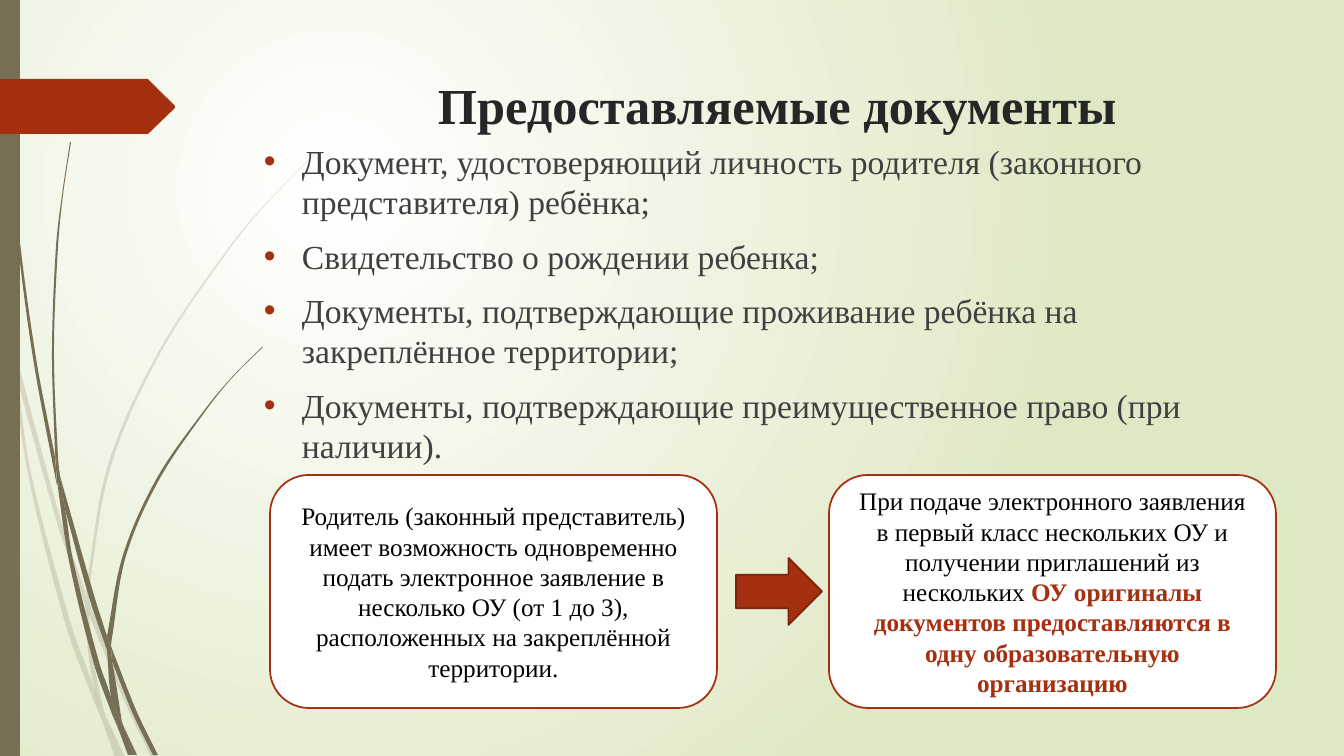
from math import dist

from lxml import etree
from pptx import Presentation
from pptx.dml.color import RGBColor
from pptx.enum.shapes import MSO_SHAPE
from pptx.enum.text import MSO_ANCHOR, MSO_AUTO_SIZE, PP_ALIGN
from pptx.oxml.ns import qn
from pptx.util import Emu, Pt

SCALE = 914400 / 100.8
FONT = "Times New Roman"
COLORS = {
    "white": "FFFFFF", "lime": "DFE8C4", "olive": "766F54", "red": "A53010",
    "dark_red": "7A240C", "title": "262626", "body": "404040", "black": "000000",
}

# Each piece of grass: one smooth edge downwards, then one upwards
PALE_GRASS = [
    ([(0, 284), (9, 325), (11, 353)], [(10, 347), (0, 301)]),
    ([(14, 348), (62, 524), (85, 591)], [(85, 604), (58, 526), (17, 379)]),
    ([(89, 601), (93, 612), (128, 698), (156, 757)],
     [(151, 757), (124, 700), (89, 615)]),
    ([(106, 717), (125, 757)], [(120, 757)]),
    ([(11, 353), (17, 379), (31, 473), (71, 624), (94, 688), (100, 713), (102, 720)],
     [(93, 699), (66, 626), (28, 474), (11, 353)]),
    ([(85, 604), (89, 615), (92, 651), (104, 712), (106, 717)],
     [(97, 698), (94, 688), (88, 651), (85, 604)]),
    ([(314, 154), (270, 199), (230, 246), (159, 351), (108, 465), (86, 589), (86, 591)],
     [(89, 601), (89, 589), (111, 466), (161, 352), (231, 247), (270, 200), (314, 155)]),
    ([(102, 720), (115, 757)], [(120, 757)]),
    ([(86, 591), (89, 601)], [(89, 615), (85, 604)]),
    ([(94, 688), (97, 698), (106, 717), (120, 757)], [(102, 720), (100, 713)]),
]
DARK_GRASS = [
    ([(4, 0), (5, 48), (8, 110), (19, 234), (36, 358), (55, 457)],
     [(57, 485), (56, 481), (33, 358), (17, 235), (7, 111), (4, 48), (3, 0)]),
    ([(60, 476), (94, 595), (107, 636)], [(107, 650), (89, 597), (65, 509)]),
    ([(111, 646), (114, 654), (137, 712), (158, 755)],
     [(153, 755), (133, 714), (112, 661)]),
    ([(57, 481), (65, 509), (73, 560), (99, 662), (111, 697), (118, 728)],
     [(112, 714), (94, 664), (69, 561), (57, 481)]),
    ([(71, 142), (63, 195), (58, 247), (54, 352), (58, 457), (60, 476)],
     [(55, 453), (52, 352), (56, 247), (62, 195), (70, 142)]),
    ([(123, 725), (137, 755)], [(134, 755)]),
    ([(55, 453), (60, 476), (65, 509)], [(57, 481)]),
    ([(262, 347), (233, 376), (206, 408), (157, 478), (123, 555), (107, 636)],
     [(111, 646), (112, 638), (126, 556), (159, 480), (207, 409), (233, 377), (263, 347)]),
    ([(118, 728), (132, 755)], [(128, 755)]),
    ([(107, 650), (112, 661), (122, 722), (123, 725)],
     [(117, 712), (111, 697), (107, 650)]),
    ([(107, 636), (111, 646)], [(112, 661), (107, 650)]),
    ([(111, 697), (117, 712), (123, 725), (134, 755)], [(131, 755), (118, 728)]),
]
TAG = [(0, 79), (148, 79), (175, 106), (175, 108), (148, 134), (0, 134)]

DOCUMENTS = [
    "Документ, удостоверяющий личность родителя (законного представителя) ребёнка;",
    "Свидетельство о рождении ребенка;",
    "Документы, подтверждающие проживание ребёнка на закреплённое территории;",
    "Документы, подтверждающие преимущественное право (при наличии).",
]
CHOICE = [("Родитель (законный представитель) имеет возможность одновременно подать "
           "электронное заявление в несколько ОУ (от 1 до 3), расположенных на "
           "закреплённой территории.", "black", False)]
ORIGINALS = [
    ("При подаче электронного заявления в первый класс нескольких ОУ и получении "
     "приглашений из нескольких ", "black", False),
    ("ОУ оригиналы документов предоставляются в одну образовательную организацию",
     "red", True),
]


def px(n):
    return Emu(round(n * SCALE))


def rgb(name):
    return RGBColor.from_string(COLORS[name])


def paint(sp, fill, line=None, alpha=None):
    sp.shadow.inherit = False
    sp.fill.solid()
    sp.fill.fore_color.rgb = rgb(fill)
    if alpha:
        color = sp.fill._xPr.find(".//" + qn("a:srgbClr"))
        etree.SubElement(color, qn("a:alpha"), val=str(alpha * 1000))
    if line:
        sp.line.color.rgb = rgb(line)
        sp.line.width = Pt(1.25)
    else:
        sp.line.fill.background()


def handles(edge):
    """Control points and end of every smooth segment along an edge."""
    ends = [edge[0], *edge, edge[-1]]
    for a, b, c, d in zip(ends, ends[1:], ends[2:], ends[3:]):
        out, back = (dist(b, c) / 3 / dist(*pair) for pair in ((a, c), (b, d)))
        yield ([q + (r - p) * out for p, q, r in zip(a, b, c)],
               [r - (u - q) * back for q, r, u in zip(b, c, d)], c)


def add_outline(s, edges, fill, alpha=None):
    """Closed outline: edges are smooth, their joins are straight."""
    points = [p for edge in edges for p in edge]
    left, top = map(min, zip(*points))
    pts = [(px(x), px(y)) for x, y in points]
    builder = s.shapes.build_freeform(*pts[0], scale=1.0)
    builder.add_line_segments(pts[1:], close=True)
    sp = builder.convert_to_shape()
    lines = [None, *sp._element.iter(qn("a:lnTo"))]
    start = 0
    for edge in edges:
        for i, controls in enumerate(handles(edge), start + 1):
            bezier = etree.Element(qn("a:cubicBezTo"))
            for x, y in controls:
                etree.SubElement(bezier, qn("a:pt"), x=str(px(x - left)),
                                 y=str(px(y - top)))
            lines[i].getparent().replace(lines[i], bezier)
        start += len(edge)
    paint(sp, fill, alpha=alpha)


def add_preset(s, kind, box, fill, line=None):
    sp = s.shapes.add_shape(kind, *map(px, box))
    paint(sp, fill, line)
    return sp


def add_run(p, text, size, color, bold=False):
    r = p.add_run()
    r.text = text
    for name, value in {"name": FONT, "size": Pt(size), "bold": bold}.items():
        setattr(r.font, name, value)
    r.font.color.rgb = rgb(color)


def format_frame(tf, anchor):
    settings = {"word_wrap": True, "auto_size": MSO_AUTO_SIZE.NONE,
                "vertical_anchor": anchor}
    for name, value in settings.items():
        setattr(tf, name, value)


def add_background(s):
    fill = s.background.fill
    fill.gradient()
    for stop, color in zip(fill.gradient_stops, ("white", "lime")):
        stop.color.rgb = rgb(color)
    grad = s.background._cSld.find(".//" + qn("a:gradFill"))
    grad.remove(grad.find(qn("a:lin")))
    circle = etree.SubElement(grad, qn("a:path"), path="circle")
    etree.SubElement(circle, qn("a:fillToRect"),
                     l="50000", t="50000", r="100000", b="100000")


def add_title(s, text):
    sp = s.shapes.title
    box = dict(zip(("left", "top", "width", "height"), (286, 69, 983, 141)))
    for name, value in box.items():
        setattr(sp, name, px(value))
    format_frame(sp.text_frame, MSO_ANCHOR.TOP)
    p = sp.text_frame.paragraphs[0]
    p.alignment = PP_ALIGN.CENTER
    add_run(p, text, 36, "title", True)


def add_bullets(s, items, box):
    tf = s.shapes.add_textbox(*map(px, box)).text_frame
    format_frame(tf, MSO_ANCHOR.TOP)
    for i, item in enumerate(items):
        p = tf.add_paragraph() if i else tf.paragraphs[0]
        p.space_before = Pt(10)
        pPr = p._p.get_or_add_pPr()
        pPr.set("marL", str(px(38)))
        pPr.set("indent", str(-px(38)))
        color = etree.SubElement(pPr, qn("a:buClr"))
        etree.SubElement(color, qn("a:srgbClr"), val=COLORS["red"])
        etree.SubElement(pPr, qn("a:buFont"), typeface="Arial")
        etree.SubElement(pPr, qn("a:buChar"), char="•")
        add_run(p, item, 24, "body")


def add_card(s, left, runs):
    sp = add_preset(s, MSO_SHAPE.ROUNDED_RECTANGLE, (left, 475, 447, 233),
                    "white", "red")
    format_frame(sp.text_frame, MSO_ANCHOR.MIDDLE)
    p = sp.text_frame.paragraphs[0]
    p.alignment = PP_ALIGN.CENTER
    for text, color, bold in runs:
        add_run(p, text, 18, color, bold)


def main():
    prs = Presentation()
    prs.slide_width, prs.slide_height = px(1344), px(756)
    s = prs.slides.add_slide(prs.slide_layouts[5])
    # Backdrop: gradient, grass, side strip and red tag
    add_background(s)
    for pieces, alpha in ((PALE_GRASS, 20), (DARK_GRASS, None)):
        for edges in pieces:
            add_outline(s, edges, "olive", alpha)
    add_preset(s, MSO_SHAPE.RECTANGLE, (0, 0, 20, 756), "olive")
    add_outline(s, [[corner] for corner in TAG], "red")
    # Title and list of documents
    add_title(s, "Предоставляемые документы")
    add_bullets(s, DOCUMENTS, (254, 136, 1014, 515))
    # Two cards joined by an arrow
    add_card(s, 270, CHOICE)
    add_card(s, 829, ORIGINALS)
    add_preset(s, MSO_SHAPE.RIGHT_ARROW, (736, 558, 86, 67), "red", "dark_red")
    prs.save("out.pptx")


if __name__ == "__main__":
    main()
